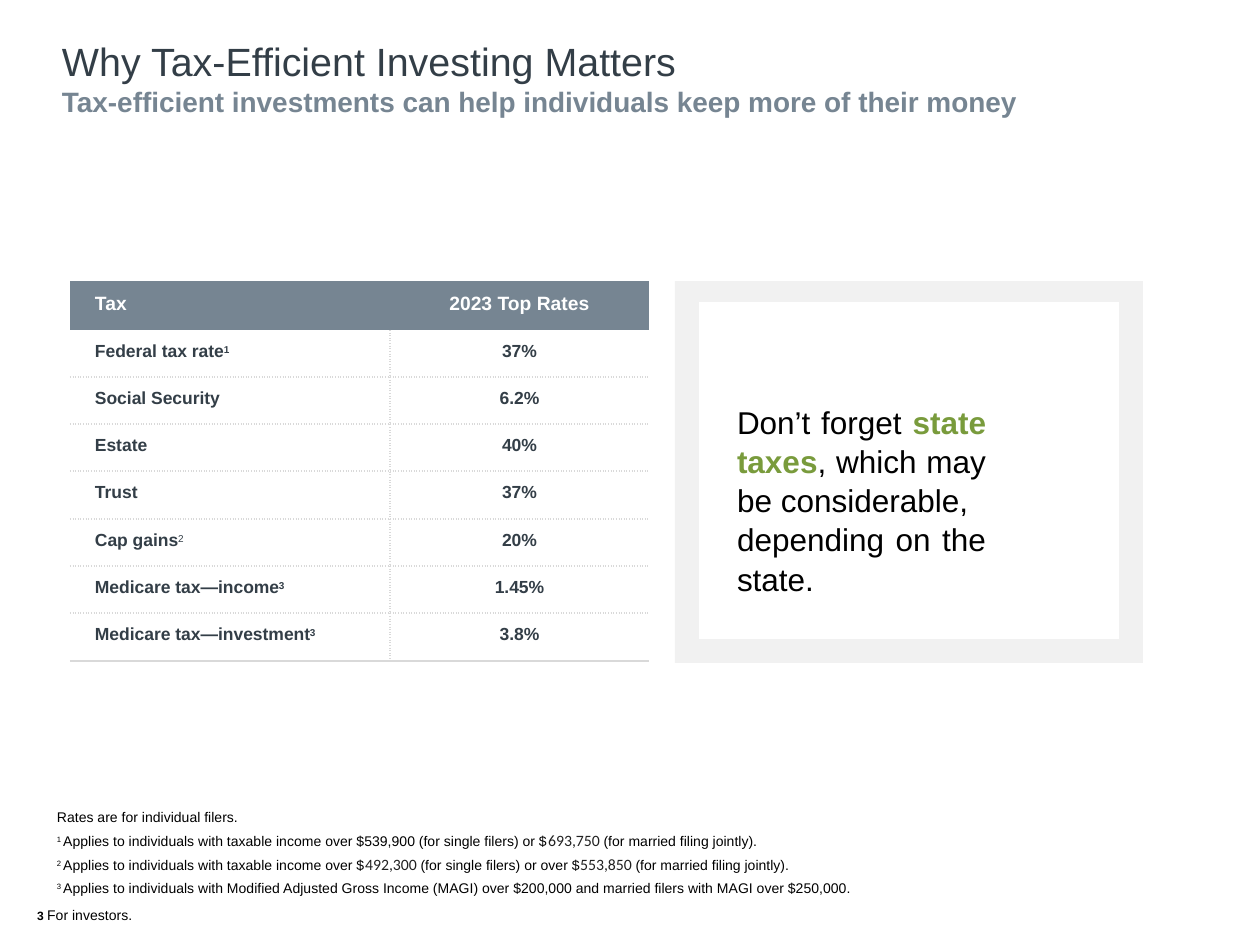
from dataclasses import dataclass
from typing import Optional

import lxml.etree
import pptx
import pptx.dml.color
import pptx.enum.shapes
import pptx.enum.text
import pptx.oxml.ns
import pptx.util

EMU_PER_PX = 914400 / 126
ALIGN = pptx.enum.text.PP_ALIGN


@dataclass(frozen=True)
class Theme:
    font: str = "Arial"
    figure_font: str = "Calibri"
    ink: str = "333E47"
    slate: str = "768592"
    green: str = "799B3C"
    black: str = "000000"
    figure_ink: str = "212121"
    white: str = "FFFFFF"
    frame: str = "F1F1F1"
    rule: str = "D9D9D9"
    title: float = 22.5
    subtitle: float = 16
    callout: float = 18
    header: float = 11
    body: float = 10
    body_mark: float = 9.8
    page_number: float = 12
    note: float = 8
    note_mark: float = 7.5
    note_figure: float = 9


THEME = Theme()


@dataclass(frozen=True)
class Span:
    text: str
    size: Optional[float] = None
    color: Optional[str] = None
    bold: Optional[bool] = None
    font: Optional[str] = None
    raised: int = 0


@dataclass(frozen=True)
class Line:
    spans: tuple[Span, ...]
    size: float
    color: str = THEME.black
    bold: bool = False
    before: float = 0
    align: ALIGN = ALIGN.LEFT
    spacing: float = 1.0


@dataclass(frozen=True)
class Box:
    left: int
    top: int
    width: int
    height: int

    def emu(self) -> tuple[int, ...]:
        return tuple(px(v) for v in (self.left, self.top, self.width, self.height))


@dataclass(frozen=True)
class TaxRate:
    tax: str
    rate: str
    mark: str = ""
    mark_bold: bool = True


def px(length: int) -> int:
    return round(length * EMU_PER_PX)


def rgb(color: str) -> pptx.dml.color.RGBColor:
    return pptx.dml.color.RGBColor.from_string(color)


def write(frame, lines: tuple[Line, ...]) -> None:
    for index, line in enumerate(lines):
        paragraph = frame.add_paragraph() if index else frame.paragraphs[0]
        paragraph.alignment = line.align
        paragraph.line_spacing = line.spacing
        paragraph.space_before = pptx.util.Pt(line.before)
        paragraph.font.name = THEME.font
        paragraph.font.size = pptx.util.Pt(line.size)
        paragraph.font.bold = line.bold
        paragraph.font.color.rgb = rgb(line.color)
        for span in line.spans:
            run = paragraph.add_run()
            run.text = span.text
            if span.size:
                run.font.size = pptx.util.Pt(span.size)
            if span.color:
                run.font.color.rgb = rgb(span.color)
            if span.bold is not None:
                run.font.bold = span.bold
            if span.font:
                run.font.name = span.font
            if span.raised:
                run.font._element.set("baseline", str(span.raised * 1000))


def set_insets(frame, left: int, top: int, right: int = 0) -> None:
    frame.word_wrap = True
    frame.vertical_anchor = pptx.enum.text.MSO_ANCHOR.TOP
    frame.margin_left, frame.margin_top = px(left), px(top)
    frame.margin_right, frame.margin_bottom = px(right), 0


def add_text(slide, box: Box, left: int, top: int, lines: tuple[Line, ...]) -> None:
    frame = slide.shapes.add_textbox(*box.emu()).text_frame
    set_insets(frame, left, top)
    write(frame, lines)


def add_panel(slide, box: Box, color: str):
    panel = slide.shapes.add_shape(pptx.enum.shapes.MSO_SHAPE.RECTANGLE, *box.emu())
    panel.shadow.inherit = False
    panel.fill.solid()
    panel.fill.fore_color.rgb = rgb(color)
    panel.line.fill.background()
    return panel


def set_borders(cell, dashes: dict[str, str]) -> None:
    properties = cell._tc.get_or_add_tcPr()
    qn = pptx.oxml.ns.qn
    for index, side in enumerate("LRTB"):
        border = lxml.etree.Element(qn(f"a:ln{side}"))
        if side in dashes:
            border.set("w", str(pptx.util.Pt(1)))
            fill = lxml.etree.SubElement(border, qn("a:solidFill"))
            lxml.etree.SubElement(fill, qn("a:srgbClr"), val=THEME.rule)
            lxml.etree.SubElement(border, qn("a:prstDash"), val=dashes[side])
        else:
            border.set("w", "0")
            lxml.etree.SubElement(border, qn("a:noFill"))
        properties.insert(index, border)


def fill_cell(cell, column: int, line: Line, dashes: dict[str, str]) -> None:
    cell.margin_left = px(0 if column else 25)
    cell.margin_right = cell.margin_bottom = 0
    cell.margin_top = px(12)
    cell.vertical_anchor = pptx.enum.text.MSO_ANCHOR.TOP
    write(cell.text_frame, (line,))
    set_borders(cell, dashes)


def add_rates(slide, box: Box, rates: tuple[TaxRate, ...]) -> None:
    table = slide.shapes.add_table(len(rates) + 1, 2, *box.emu()).table
    table.first_row = table.horz_banding = False
    header_height = 49
    body_height = box.height - header_height
    edges = [0] + [header_height + body_height * i // len(rates) for i in range(len(rates) + 1)]
    for row, top, bottom in zip(table.rows, edges, edges[1:]):
        row.height = px(bottom - top)
    for column, width in enumerate((320, box.width - 320)):
        table.columns[column].width = px(width)
        align = ALIGN.CENTER if column else ALIGN.LEFT
        header = table.cell(0, column)
        heading = Span(("Tax", "2023 Top Rates")[column])
        fill_cell(header, column, Line((heading,), THEME.header, THEME.white, True, align=align), {})
        header.fill.solid()
        header.fill.fore_color.rgb = rgb(THEME.slate)
        for row, entry in enumerate(rates, 1):
            spans = (Span(entry.rate if column else entry.tax),)
            if entry.mark and not column:
                spans += (Span(entry.mark, THEME.body_mark, bold=entry.mark_bold, raised=26),)
            dashes = {"L" if column else "R": "sysDot",
                      "B": "solid" if row == len(rates) else "sysDot"}
            if row > 1:
                dashes["T"] = "sysDot"
            cell = table.cell(row, column)
            fill_cell(cell, column, Line(spans, THEME.body, THEME.ink, True, align=align), dashes)
            cell.fill.background()


def figure(text: str) -> Span:
    return Span(text, THEME.note_figure, THEME.figure_ink, font=THEME.figure_font)


def footnote(mark: str, before: float, *spans: Span) -> Line:
    return Line((Span(mark + " ", THEME.note_mark, raised=28), *spans), THEME.note, before=before)


RATES = (
    TaxRate("Federal tax rate", "37%", "1"),
    TaxRate("Social Security", "6.2%"),
    TaxRate("Estate", "40%"),
    TaxRate("Trust", "37%"),
    TaxRate("Cap gains", "20%", "2", False),
    TaxRate("Medicare tax—income", "1.45%", "3"),
    TaxRate("Medicare tax—investment", "3.8%", "3"),
)
HEADLINE = (
    Line((Span("Why Tax-Efficient Investing Matters"),), THEME.title, THEME.ink),
    Line((Span("Tax-efficient investments can help individuals keep more of their money"),),
         THEME.subtitle, THEME.slate, True, 0.2),
)
REMINDER = tuple(
    Line(spans, THEME.callout, align=ALIGN.JUSTIFY, spacing=1.04)
    for spans in (
        (Span("Don’t forget "), Span("state taxes", color=THEME.green, bold=True),
         Span(", which may be considerable,")),
        (Span("depending on the state."),),
    )
)
FOOTNOTES = (
    Line((Span("Rates are for individual filers."),), THEME.note),
    footnote("1", 2.6,
             Span("Applies to individuals with taxable income over $539,900 (for single filers) or $"),
             figure("693,750 "), Span("(for married filing jointly).")),
    footnote("2", 3, Span("Applies to individuals with taxable income over $"), figure("492,300 "),
             Span("(for single filers) or over $"), figure("553,850 "),
             Span("(for married filing jointly).")),
    footnote("3", 3.4, Span("Applies to individuals with Modified Adjusted Gross Income (MAGI) over "
                            "$200,000 and married filers with MAGI over $250,000.")),
)
AUDIENCE = (Line((Span("3 ", THEME.page_number, bold=True, raised=3), Span("For investors.")), THEME.note),)


def main() -> None:
    deck = pptx.Presentation()
    deck.slide_width, deck.slide_height = px(1260), px(945)
    slide = deck.slides.add_slide(deck.slide_layouts[6])
    add_text(slide, Box(61, 35, 1119, 88), 1, 2, HEADLINE)
    add_rates(slide, Box(70, 281, 579, 380), RATES)
    add_panel(slide, Box(675, 281, 468, 382), THEME.frame)
    reminder = add_panel(slide, Box(699, 302, 420, 337), THEME.white).text_frame
    set_insets(reminder, 38, 99, 133)
    write(reminder, REMINDER)
    add_text(slide, Box(35, 898, 107, 20), 2, 2, AUDIENCE)
    add_text(slide, Box(52, 803, 809, 94), 5, 6, FOOTNOTES)
    deck.save("out.pptx")


if __name__ == "__main__":
    main()
